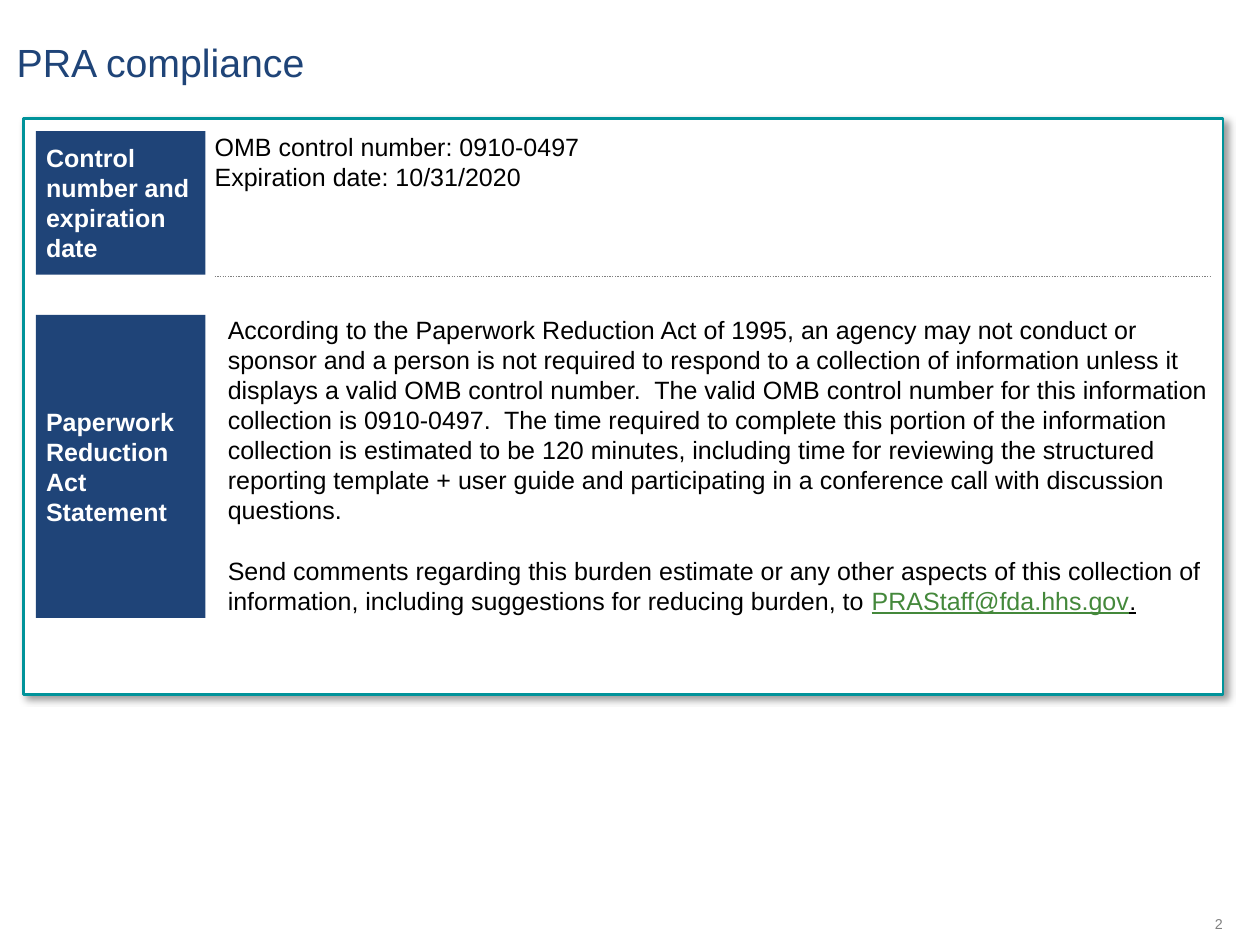
"""Build the PRA compliance slide."""
import lxml.etree
import pptx
import pptx.dml.color
import pptx.enum.dml
import pptx.enum.shapes
import pptx.enum.text
import pptx.oxml
import pptx.oxml.ns
import pptx.util

Cm, Pt = pptx.util.Cm, pptx.util.Pt
ALIGN = pptx.enum.text.PP_ALIGN
ANCHOR = pptx.enum.text.MSO_ANCHOR
NAVY, TEAL, GREEN = "1F4478", "00939A", "44883B"
GRAY, WHITE, BLACK = "808080", "FFFFFF", "000000"
LABEL_LEFT, LABEL_WIDTH = 0.71, 3.35
TEXT_WIDTH = 19.66

STATEMENT = (
    "According to the Paperwork Reduction Act of 1995, an agency may not conduct or "
    "sponsor and a person is not required to respond to a collection of information "
    "unless it displays a valid OMB control number.  The valid OMB control number for "
    "this information collection is 0910-0497.  The time required to complete this "
    "portion of the information collection is estimated to be 120 minutes, including "
    "time for reviewing the structured reporting template + user guide and "
    "participating in a conference call with discussion questions."
)
COMMENTS = (
    "Send comments regarding this burden estimate or any other aspects of this "
    "collection of information, including suggestions for reducing burden, to "
)


def rgb(color):
    """Turn a hex string into a colour."""
    return pptx.dml.color.RGBColor.from_string(color)


def format_frame(tf, anchor=ANCHOR.TOP, inset=0, wrap=True):
    """Set anchor, insets and wrapping of a text frame."""
    tf.vertical_anchor = anchor
    tf.margin_left = tf.margin_right = tf.margin_top = tf.margin_bottom = Cm(inset)
    tf.word_wrap = wrap
    tf.auto_size = pptx.enum.text.MSO_AUTO_SIZE.NONE


def format_paragraph(p, size=14, color=BLACK, bold=False, align=ALIGN.LEFT):
    """Set the font and alignment of a paragraph."""
    p.alignment = align
    p.font.name = "Arial"
    p.font.size = Pt(size)
    p.font.bold = bold
    p.font.color.rgb = rgb(color)


def add_title(s, text):
    """Place and format the title placeholder."""
    sp = s.shapes.title
    sp.left, sp.top, sp.width, sp.height = Cm(0.33), Cm(0.76), Cm(23.95), Cm(0.94)
    sp.text_frame.text = text
    format_frame(sp.text_frame)
    format_paragraph(sp.text_frame.paragraphs[0], 22, NAVY)


def add_box(s, left, top, width, height, fill):
    """Add a plain filled rectangle without a line."""
    sp = s.shapes.add_shape(pptx.enum.shapes.MSO_SHAPE.RECTANGLE,
                            Cm(left), Cm(top), Cm(width), Cm(height))
    sp.fill.solid()
    sp.fill.fore_color.rgb = rgb(fill)
    sp.line.fill.background()
    sp.shadow.inherit = False
    return sp


def add_panel(s, left, top, width, height):
    """Add the outlined white panel with its soft shadow."""
    sp = add_box(s, left, top, width, height, WHITE)
    sp.line.color.rgb = rgb(TEAL)
    sp.line.width = Pt(1.5)
    effects = sp.element.spPr.find(pptx.oxml.ns.qn("a:effectLst"))
    effects.append(pptx.oxml.parse_xml(
        f'<a:outerShdw {pptx.oxml.ns.nsdecls("a")} blurRad="{Pt(4)}" dist="{Pt(3)}" '
        'dir="2700000" algn="tl" rotWithShape="0">'
        f'<a:srgbClr val="{BLACK}"><a:alpha val="40000"/></a:srgbClr></a:outerShdw>'))


def add_label(s, top, height, text):
    """Add a navy row label."""
    sp = add_box(s, LABEL_LEFT, top, LABEL_WIDTH, height, NAVY)
    sp.text_frame.text = text
    format_frame(sp.text_frame, ANCHOR.MIDDLE, 0.2)
    format_paragraph(sp.text_frame.paragraphs[0], color=WHITE, bold=True)


def add_text(s, left, top, height, paragraphs, gap=0):
    """Add body text with a gap between paragraphs."""
    tf = s.shapes.add_textbox(Cm(left), Cm(top), Cm(TEXT_WIDTH), Cm(height)).text_frame
    format_frame(tf)
    tf.text = "\n".join(paragraphs)
    for i, p in enumerate(tf.paragraphs):
        format_paragraph(p)
        p.space_before = Pt(gap if i else 0)
    return tf


def add_underlined(p, text, color):
    """Append an underlined run to a paragraph."""
    r = p.add_run()
    r.text = text
    r.font.underline = True
    r.font.color.rgb = rgb(color)


def add_divider(s, left, top, width):
    """Add a dotted horizontal rule."""
    line = s.shapes.add_connector(pptx.enum.shapes.MSO_CONNECTOR.STRAIGHT,
                                  Cm(left), Cm(top), Cm(left + width), Cm(top))
    line.line.color.rgb = rgb(GRAY)
    line.line.width = Pt(0.75)
    line.line.dash_style = pptx.enum.dml.MSO_LINE.ROUND_DOT
    lxml.etree.SubElement(line.element.spPr, pptx.oxml.ns.qn("a:effectLst"))


def add_slide_number(s, number):
    """Add the slide number as a field."""
    tf = s.shapes.add_textbox(Cm(23.8), Cm(18.08), Cm(0.36), Cm(0.33)).text_frame
    format_frame(tf, ANCHOR.MIDDLE, wrap=False)
    p = tf.paragraphs[0]
    format_paragraph(p, 8, GRAY, align=ALIGN.RIGHT)
    p._p.append(pptx.oxml.parse_xml(
        f'<a:fld {pptx.oxml.ns.nsdecls("a")} type="slidenum" '
        'id="{B6F15528-21DE-4FAA-801E-634DDDAF4B2B}">'
        f'<a:rPr lang="en-US" sz="800"><a:solidFill><a:srgbClr val="{GRAY}"/></a:solidFill>'
        f'<a:latin typeface="Arial"/></a:rPr><a:t>{number}</a:t></a:fld>'))


def main():
    """Build and save the slide."""
    prs = pptx.Presentation()
    prs.slide_width, prs.slide_height = Cm(24.89), Cm(18.67)
    prs.element.set("firstSlideNum", "2")
    s = prs.slides.add_slide(prs.slide_layouts[5])
    add_title(s, "PRA compliance")
    add_panel(s, 0.46, 2.34, 23.7, 11.38)
    add_label(s, 2.59, 2.84, "Control number and expiration date")
    add_label(s, 6.22, 5.99, "Paperwork Reduction Act Statement")
    add_divider(s, 4.24, 5.46, TEXT_WIDTH)
    add_text(s, 4.24, 2.59, 1.19,
             ["OMB control number: 0910-0497", "Expiration date: 10/31/2020"])
    tf = add_text(s, 4.5, 6.22, 5.99, [STATEMENT, COMMENTS], gap=17)
    add_underlined(tf.paragraphs[1], "PRAStaff@fda.hhs.gov", GREEN)
    add_underlined(tf.paragraphs[1], ".", BLACK)
    add_slide_number(s, 2)
    prs.save("out.pptx")


if __name__ == "__main__":
    main()
